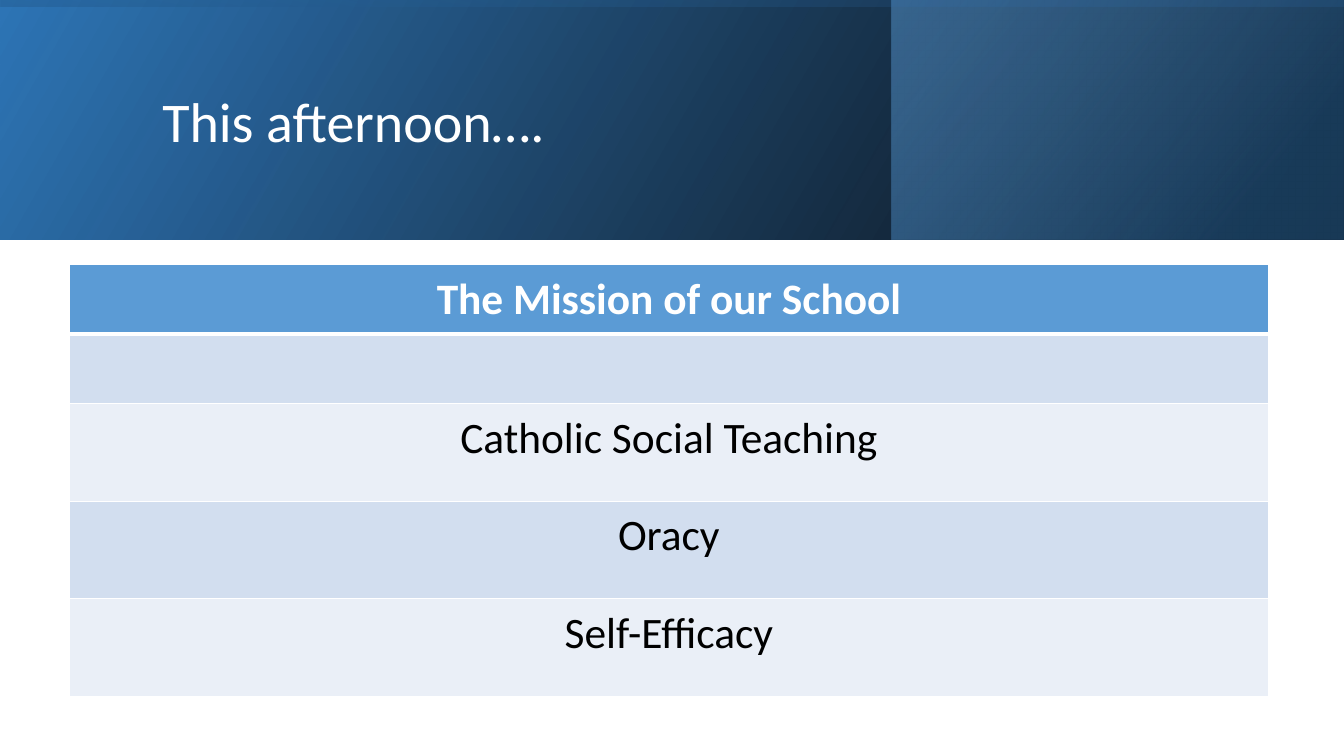
from dataclasses import dataclass

from lxml import etree
from pptx import Presentation, util as u
from pptx.dml.color import RGBColor
from pptx.enum import shapes, text
from pptx.oxml.ns import qn
from pptx.slide import Slide
from pptx.table import _Cell as Cell

EMU_PER_PX = 9525


@dataclass(frozen=True)
class Theme:
    font: str = "Calibri"
    title_size: int = 40
    table_size: int = 31
    white: str = "FFFFFF"
    black: str = "000000"
    blue: str = "2E75B6"
    navy: str = "1F4E79"
    accent: str = "5B9BD5"
    dark_band: str = "D2DEEF"
    light_band: str = "EAEFF7"


@dataclass(frozen=True)
class Box:
    left: int
    top: int
    width: int
    height: int


@dataclass(frozen=True)
class Stop:
    position: int
    color: str
    opacity: int


@dataclass(frozen=True)
class Banner:
    box: Box
    stops: tuple[Stop, Stop]
    angle: int
    rotation: int = 0


@dataclass(frozen=True)
class Row:
    label: str
    height: int
    fill: str
    color: str = Theme.black
    bold: bool = False


THEME = Theme()
BANNERS = (
    Banner(Box(0, 0, 1280, 228), (Stop(0, THEME.black, 96), Stop(100, THEME.blue, 100)), 330),
    Banner(Box(849, 0, 430, 228), (Stop(19, THEME.navy, 68), Stop(100, THEME.accent, 48)), 320),
    Banner(Box(526, -526, 228, 1280), (Stop(23, THEME.blue, 16), Stop(99, THEME.black, 45)), 350, 270),
)
TITLE_BOX = Box(145, 36, 1020, 165)
ROWS = (
    Row("The Mission of our School", 66, THEME.accent, THEME.white, True),
    Row("", 66, THEME.dark_band),
    Row("Catholic Social Teaching", 93, THEME.light_band),
    Row("Oracy", 93, THEME.dark_band),
    Row("Self-Efficacy", 93, THEME.light_band),
)
TABLE_BOX = Box(66, 252, 1142, sum(row.height for row in ROWS))


def px(length: int) -> u.Emu:
    return u.Emu(length * EMU_PER_PX)


def place(box: Box) -> tuple[u.Emu, u.Emu, u.Emu, u.Emu]:
    return px(box.left), px(box.top), px(box.width), px(box.height)


def add_run(paragraph, words: str, size: int, color: str, bold: bool = False) -> None:
    run = paragraph.add_run()
    run.text = words
    run.font.name = THEME.font
    run.font.size = u.Pt(size)
    run.font.bold = bold
    run.font.color.rgb = RGBColor.from_string(color)


def add_banner(slide: Slide, banner: Banner) -> None:
    """Draw a mirrored rectangle with a translucent two-stop gradient."""
    shape = slide.shapes.add_shape(shapes.MSO_SHAPE.RECTANGLE, *place(banner.box))
    shape.shadow.inherit = False
    shape.rotation = banner.rotation
    shape.line.fill.background()
    shape.fill.gradient()
    shape.fill.gradient_angle = 360 - banner.angle
    for target, stop in zip(shape.fill.gradient_stops, banner.stops):
        target.position = stop.position / 100
        target.color.rgb = RGBColor.from_string(stop.color)
    properties = shape._element.spPr
    for color, stop in zip(list(properties.iter(qn("a:srgbClr"))), banner.stops):
        etree.SubElement(color, qn("a:alpha"), val=str(stop.opacity * 1000))
    properties.find(qn("a:xfrm")).set("flipH", "1")


def add_title(slide: Slide, words: str) -> None:
    title = slide.shapes.title
    title.left, title.top, title.width, title.height = place(TITLE_BOX)
    frame = title.text_frame
    frame.auto_size = text.MSO_AUTO_SIZE.NONE
    frame.vertical_anchor = text.MSO_ANCHOR.MIDDLE
    paragraph = frame.paragraphs[0]
    paragraph.alignment = text.PP_ALIGN.LEFT
    paragraph.line_spacing = 0.9
    add_run(paragraph, words, THEME.title_size, THEME.white)
    slide.shapes._spTree.append(title._element)  # in front of the banners


def add_borders(cell: Cell, top: int, bottom: int) -> None:
    """Give the cell white borders; widths in points, sides always 1."""
    properties = cell._tc.get_or_add_tcPr()
    for side, width in (("L", 1), ("R", 1), ("T", top), ("B", bottom)):
        line = etree.SubElement(properties, qn(f"a:ln{side}"), w=str(u.Pt(width)))
        fill = etree.SubElement(line, qn("a:solidFill"))
        etree.SubElement(fill, qn("a:srgbClr"), val=THEME.white)


def add_table(slide: Slide, rows: tuple[Row, ...]) -> None:
    table = slide.shapes.add_table(len(rows), 1, *place(TABLE_BOX)).table
    table.first_row = table.horz_banding = False
    for index, row in enumerate(rows):
        table.rows[index].height = px(row.height)
        cell = table.cell(index, 0)
        cell.margin_left = cell.margin_right = px(16)
        cell.margin_top = cell.margin_bottom = px(8)
        add_borders(cell, top=3 if index == 1 else 1, bottom=3 if index == 0 else 1)
        cell.fill.solid()
        cell.fill.fore_color.rgb = RGBColor.from_string(row.fill)
        if row.label:
            paragraph = cell.text_frame.paragraphs[0]
            paragraph.alignment = text.PP_ALIGN.CENTER
            add_run(paragraph, row.label, THEME.table_size, row.color, row.bold)


def main() -> None:
    presentation = Presentation()
    presentation.slide_width, presentation.slide_height = px(1280), px(720)
    title_only = presentation.slide_layouts.get_by_name("Title Only")
    slide = presentation.slides.add_slide(title_only)
    for banner in BANNERS:
        add_banner(slide, banner)
    add_title(slide, "This afternoon….")
    add_table(slide, ROWS)
    presentation.save("out.pptx")


if __name__ == "__main__":
    main()
